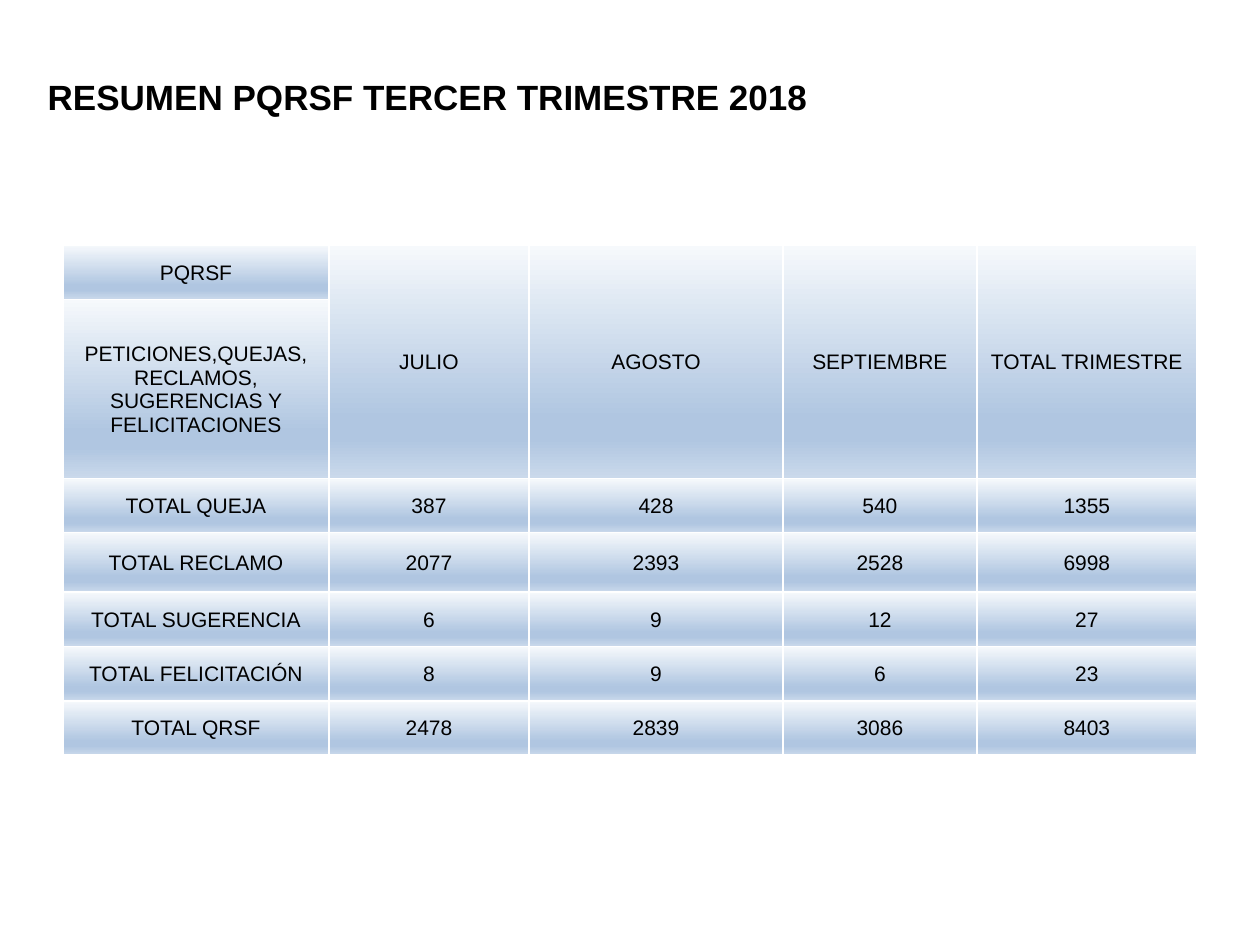
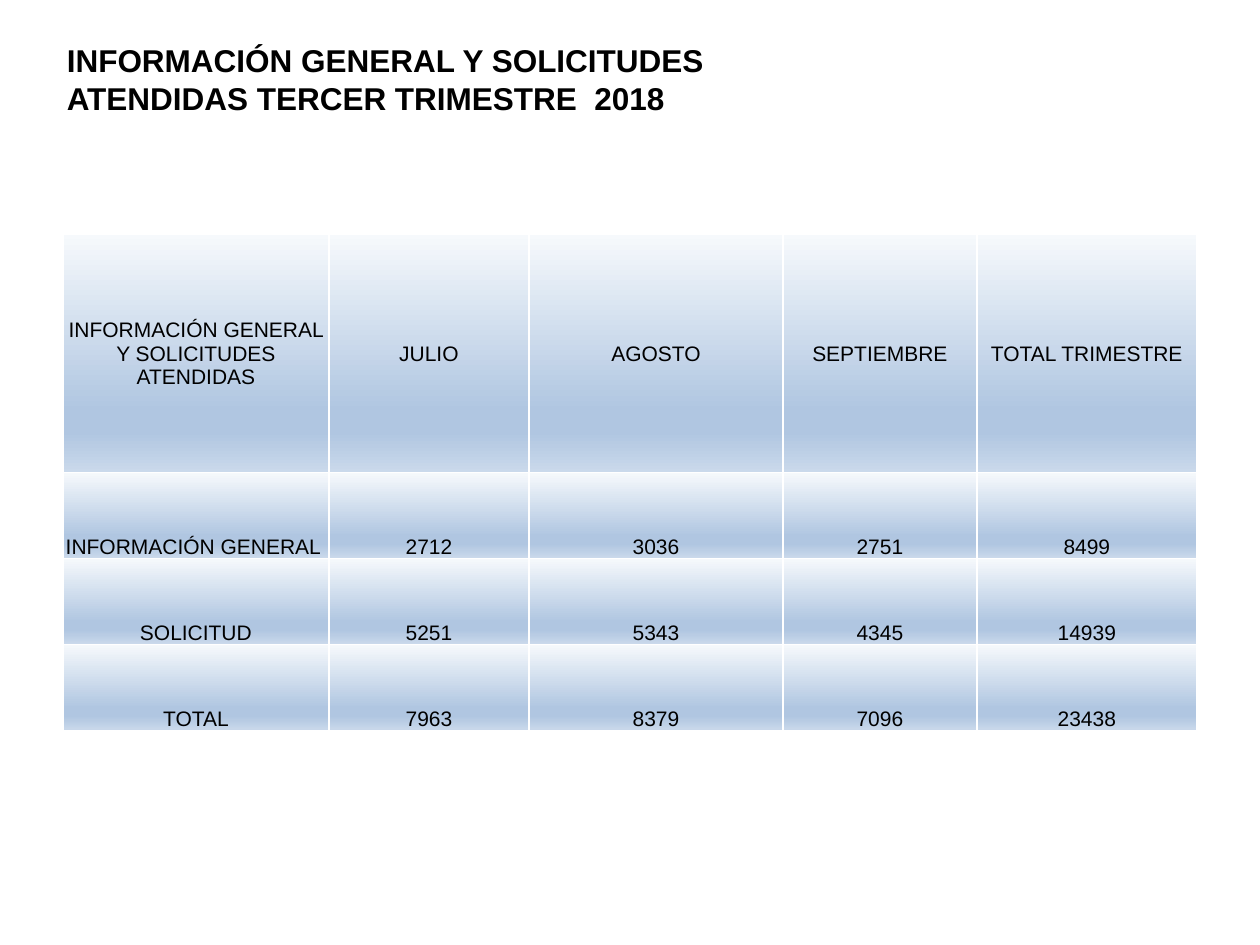
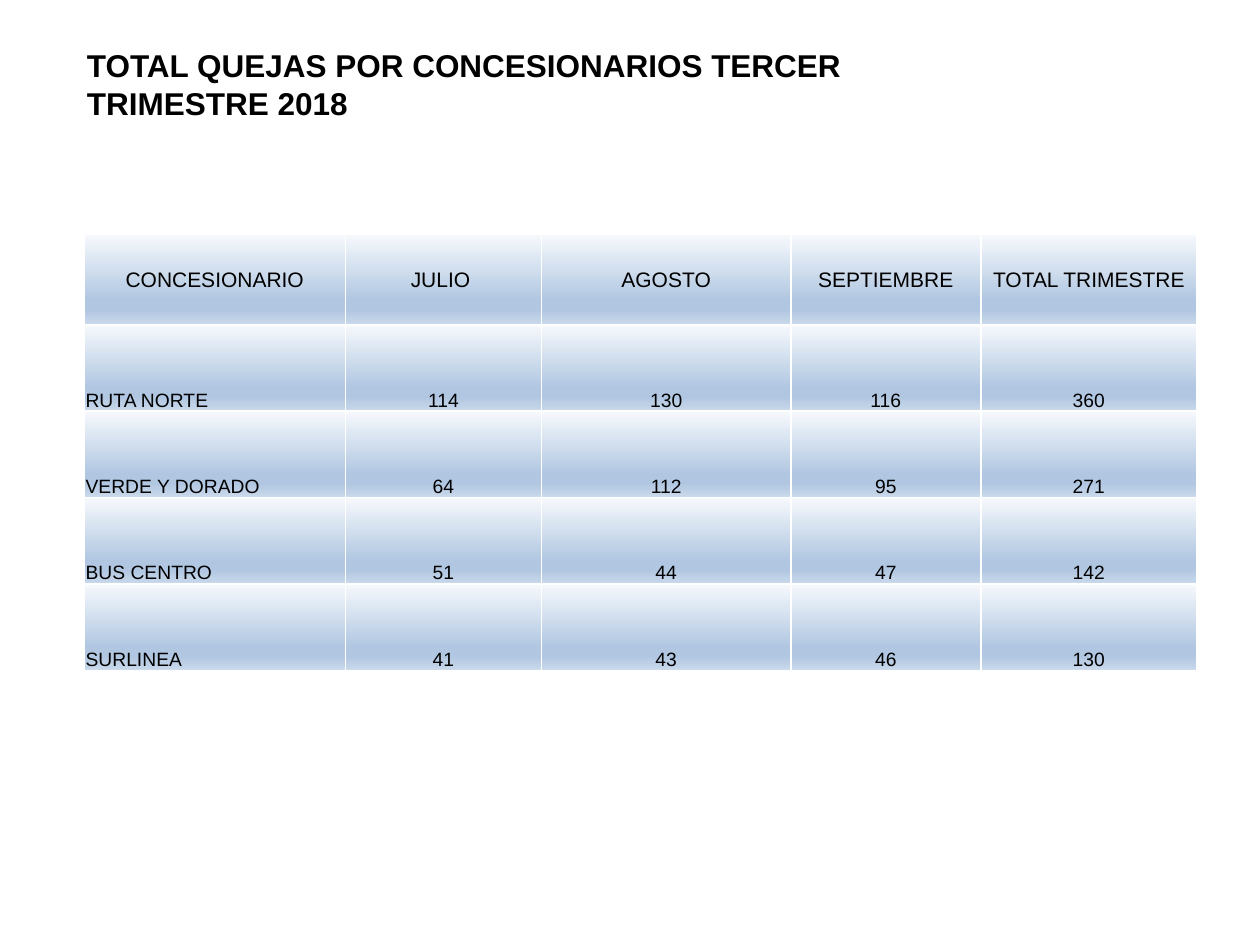
from lxml.etree import SubElement
from pptx import Presentation
from pptx.dml.color import RGBColor
from pptx.enum.text import MSO_ANCHOR as Anchor, MSO_AUTO_SIZE as AutoSize, PP_ALIGN as Align
from pptx.oxml.ns import qn
from pptx.util import Pt

BLACK = RGBColor(0x00, 0x00, 0x00)
WHITE = RGBColor(0xFF, 0xFF, 0xFF)
PALE_BLUE = RGBColor(0xF6, 0xF9, 0xFC)
MID_BLUE = RGBColor(0xB0, 0xC6, 0xE1)
SOFT_BLUE = RGBColor(0xCA, 0xD9, 0xEB)
GRADIENT = [(0, PALE_BLUE), (74, MID_BLUE), (83, MID_BLUE), (100, SOFT_BLUE)]

FONT = "Arial"
HEADER_SIZE = 12
COLUMN_WIDTHS = [152, 114.3, 145.2, 110.7, 125.8]
TABLE_RIGHT = 684
MONTHS = ["JULIO", "AGOSTO", "SEPTIEMBRE", "TOTAL TRIMESTRE"]

SUMMARY_ROWS = [
    ["PQRSF", *MONTHS],
    ["PETICIONES,QUEJAS, RECLAMOS, SUGERENCIAS Y FELICITACIONES", "", "", "", ""],
    ["TOTAL QUEJA", 387, 428, 540, 1355],
    ["TOTAL RECLAMO", 2077, 2393, 2528, 6998],
    ["TOTAL SUGERENCIA", 6, 9, 12, 27],
    ["TOTAL FELICITACIÓN", 8, 9, 6, 23],
    ["TOTAL QRSF", 2478, 2839, 3086, 8403],
]
REQUEST_ROWS = [
    ["INFORMACIÓN GENERAL Y SOLICITUDES ATENDIDAS", *MONTHS],
    ["INFORMACIÓN GENERAL ", 2712, 3036, 2751, 8499],
    ["SOLICITUD", 5251, 5343, 4345, 14939],
    ["TOTAL", 7963, 8379, 7096, 23438],
]
OPERATOR_ROWS = [
    ["CONCESIONARIO", "JULIO ", *MONTHS[1:]],
    ["RUTA NORTE", 114, 130, 116, 360],
    ["VERDE Y DORADO", 64, 112, 95, 271],
    ["BUS CENTRO", 51, 44, 47, 142],
    ["SURLINEA", 41, 43, 46, 130],
]


def format_text(text_frame, size, align, bold=False):
    for paragraph in text_frame.paragraphs:
        paragraph.alignment = align
        for run in paragraph.runs:
            run.font.name = FONT
            run.font.size = Pt(size)
            run.font.bold = bold
            run.font.color.rgb = BLACK


def add_titled_slide(presentation, text, left, top, width, height, size):
    slide = presentation.slides.add_slide(presentation.slide_layouts[5])
    title = slide.shapes.title
    title.left, title.top = Pt(left), Pt(top)
    title.width, title.height = Pt(width), Pt(height)
    text_frame = title.text_frame
    text_frame.text = text
    text_frame.word_wrap = True
    text_frame.auto_size = AutoSize.NONE
    text_frame.vertical_anchor = Anchor.MIDDLE
    format_text(text_frame, size, Align.LEFT, bold=True)
    return slide


def add_color(parent, color):
    SubElement(parent, qn("a:srgbClr"), val=str(color))


def paint_cell(cell):
    properties = cell._tc.get_or_add_tcPr()
    for side in ("a:lnL", "a:lnR", "a:lnT", "a:lnB"):
        line = SubElement(properties, qn(side), w=str(Pt(1)))
        add_color(SubElement(line, qn("a:solidFill")), WHITE)
    gradient = SubElement(properties, qn("a:gradFill"), rotWithShape="1")
    stops = SubElement(gradient, qn("a:gsLst"))
    for percent, color in GRADIENT:
        add_color(SubElement(stops, qn("a:gs"), pos=str(percent * 1000)), color)
    SubElement(gradient, qn("a:lin"), ang="5400000", scaled="0")


def fill_cell(cell, value, size, align, anchor):
    cell.margin_left = cell.margin_right = cell.margin_top = Pt(0.72)
    cell.margin_bottom = 0
    cell.vertical_anchor = anchor
    cell.text_frame.text = str(value)
    format_text(cell.text_frame, size, align)
    paint_cell(cell)


def add_summary_table(slide, rows, left, top, row_heights, body_size=HEADER_SIZE,
                      label_align=Align.CENTER, body_anchor=Anchor.BOTTOM):
    width = TABLE_RIGHT - left
    scale = width / sum(COLUMN_WIDTHS)
    frame = slide.shapes.add_table(len(rows), len(COLUMN_WIDTHS), Pt(left), Pt(top),
                                   Pt(width), Pt(sum(row_heights)))
    table = frame.table
    table.first_row = table.horz_banding = False
    for column, column_width in zip(table.columns, COLUMN_WIDTHS):
        column.width = Pt(column_width * scale)
    for row, height in zip(table.rows, row_heights):
        row.height = Pt(height)
    for row_index, values in enumerate(rows):
        is_header = row_index == 0
        size = HEADER_SIZE if is_header else body_size
        anchor = Anchor.MIDDLE if is_header else body_anchor
        for column_index, value in enumerate(values):
            is_label = column_index == 0 and not is_header
            align = label_align if is_label else Align.CENTER
            fill_cell(table.cell(row_index, column_index), value, size, align, anchor)
    return table


def main():
    presentation = Presentation()
    presentation.slide_width, presentation.slide_height = Pt(720), Pt(540)

    slide = add_titled_slide(presentation, "RESUMEN PQRSF TERCER TRIMESTRE 2018",
                             20, 21.6, 664, 67, 20)
    table = add_summary_table(slide, SUMMARY_ROWS, 36, 140,
                              [31.1, 102.2, 31.1, 33.9, 31.1, 31.1, 31.1],
                              body_anchor=Anchor.MIDDLE)
    for column_index in range(1, len(COLUMN_WIDTHS)):
        table.cell(0, column_index).merge(table.cell(1, column_index))

    slide = add_titled_slide(
        presentation,
        "INFORMACIÓN GENERAL Y SOLICITUDES\vATENDIDAS TERCER TRIMESTRE  2018",
        31, 0, 636.5, 90, 18)
    add_summary_table(slide, REQUEST_ROWS, 36, 134, [136] + [49.2] * 3)

    slide = add_titled_slide(presentation,
                             "TOTAL QUEJAS POR CONCESIONARIOS TERCER TRIMESTRE 2018",
                             42.5, 2.9, 453.6, 90, 18)
    add_summary_table(slide, OPERATOR_ROWS, 48.2, 134, [51.6] + [49.4] * 4,
                      body_size=11, label_align=Align.LEFT)

    presentation.save("out.pptx")


if __name__ == "__main__":
    main()
